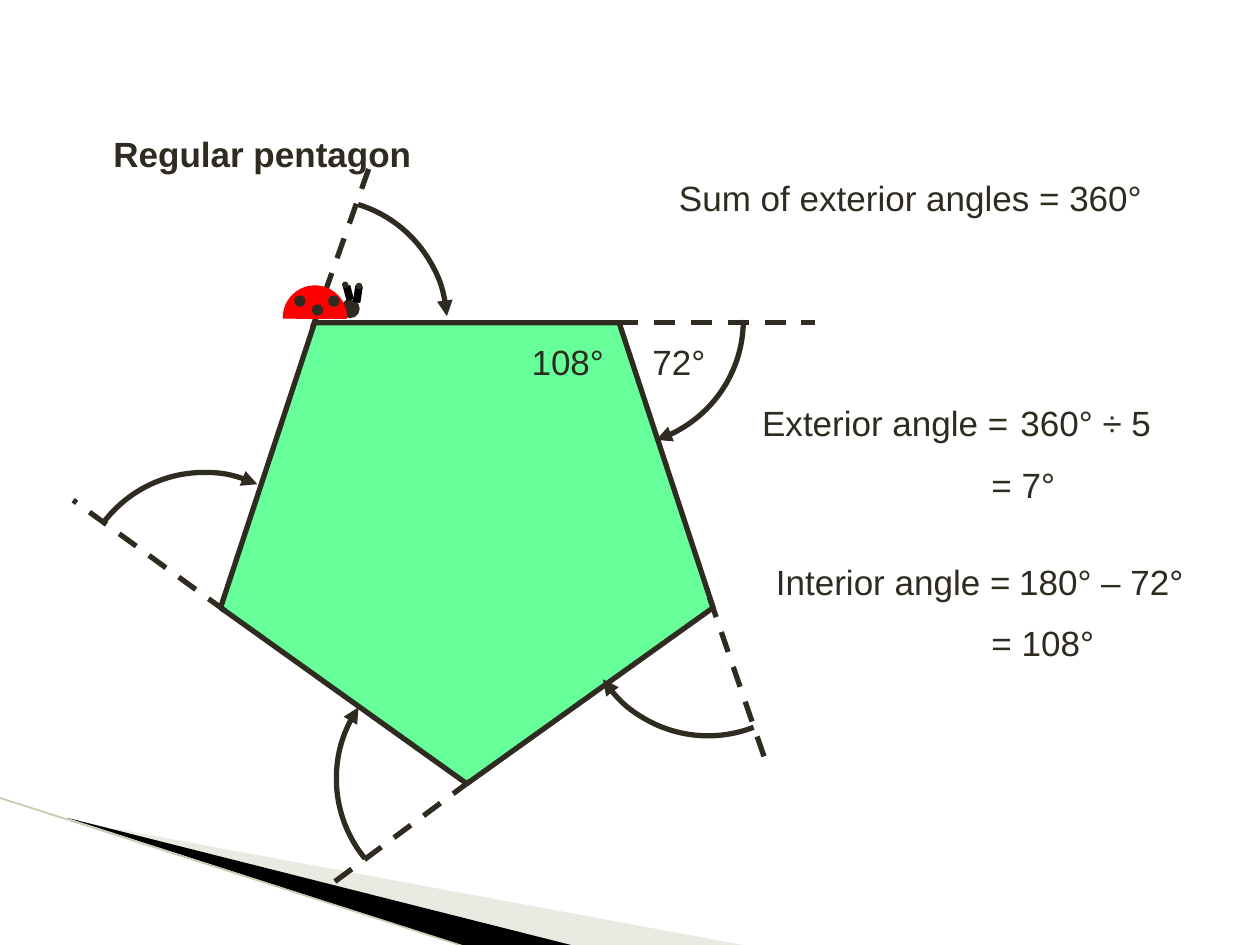
from lxml.etree import SubElement
from pptx import Presentation
from pptx.dml.color import RGBColor
from pptx.enum.dml import MSO_LINE
from pptx.enum.shapes import MSO_CONNECTOR, MSO_SHAPE
from pptx.enum.text import MSO_ANCHOR, PP_ALIGN
from pptx.oxml.ns import qn
from pptx.util import Inches, Pt

INK, GREEN, RED, BLACK = "2F2B20", "66FF99", "FF0000", "000000"

TITLE = ("Regular pentagon", 0.8, 1, 2.58)
LABELS = [  # text, left, top, width
    ("72°", 5.08, 2.65, 0.63),
    ("108°", 4.12, 2.65, 0.78),
    ("Sum of exterior angles = 360°", 5.29, 1.35, 3.95),
    ("Exterior angle =", 5.95, 3.14, 2.19),
    ("360° ÷ 5", 8, 3.14, 1.32),
    ("= 7°", 7.77, 3.63, 0.71),
    ("Interior angle =", 6.06, 4.4, 2.08),
    ("180° – 72°", 7.99, 4.4, 1.57),
    ("= 108°", 7.77, 4.88, 1.02),
]
WINGS = [  # points, colour, opacity in percent
    ([(0.55, 6.51), (5.95, 7.51), (4.56, 7.51)], "CECCB7", 40),
    ([(0.53, 6.49), (4.57, 7.51), (3.72, 7.52)], BLACK, 100),
]
RAYS = [  # sides extended past each corner
    ((4.9, 2.56), (6.47, 2.56)),
    ((5.63, 4.74), (6.1, 6.11)),
    ((3.73, 6.2), (2.64, 7.01)),
    ((1.79, 4.85), (0.58, 3.97)),
    ((2.48, 2.6), (2.93, 1.33)),
]
TURNS = [  # centre, start and end in degrees clockwise from east
    ((4.9, 2.54), 0, 72),
    ((2.55, 2.58), 287, 356),
    ((1.62, 4.75), 216.4, 295),
    ((3.67, 6.18), 140.6, 214.5),
    ((5.62, 4.84), 68.8, 146.5),
]
RADIUS = 1
HEAD = (2.71, 2.38, 0.14)  # left, top, size
SPOTS = [(2.34, 2.35, 0.08), (2.48, 2.42, 0.08), (2.61, 2.35, 0.08)]
TIPS = [(2.72, 2.24, 0.04), (2.83, 2.25, 0.04)]
FEELERS = [((2.78, 2.38), (2.75, 2.27)), ((2.83, 2.4), (2.85, 2.27))]


def rgb(code):
    return RGBColor.from_string(code)


def paint(shape, fill=None, line=None, width=0.75):
    shape.shadow.inherit = False
    if fill:
        shape.fill.solid()
        shape.fill.fore_color.rgb = rgb(fill)
    else:
        shape.fill.background()
    if line:
        shape.line.color.rgb = rgb(line)
        shape.line.width = Pt(width)
    else:
        shape.line.fill.background()


def add_form(shapes, kind, x, y, w, h, **look):
    form = shapes.add_shape(kind, Inches(x), Inches(y), Inches(w), Inches(h))
    paint(form, **look)
    return form


def add_line(shapes, start, end, color, width, dash=None):
    ends = [Inches(v) for v in (*start, *end)]
    line = shapes.add_connector(MSO_CONNECTOR.STRAIGHT, *ends)
    line.line.color.rgb = rgb(color)
    line.line.width = Pt(width)
    line.line.dash_style = dash
    SubElement(line._element.spPr, qn("a:effectLst"))


def add_wing(shapes, points, color, alpha):
    first, *rest = [(Inches(x), Inches(y)) for x, y in points]
    pen = shapes.build_freeform(*first)
    pen.add_line_segments(rest, close=True)
    wing = pen.convert_to_shape()
    paint(wing, color)
    if alpha < 100:
        tone = wing._element.spPr.find(".//" + qn("a:srgbClr"))
        SubElement(tone, qn("a:alpha"), val=str(alpha * 1000))


def add_turn(shapes, centre, start, end):
    """Draw a clockwise arc with an arrowhead at its end."""
    x, y = centre
    arc = add_form(shapes, MSO_SHAPE.ARC, x - RADIUS, y - RADIUS,
                   2 * RADIUS, 2 * RADIUS, line=INK, width=3)
    for i, angle in enumerate((start, end)):
        arc.adjustments[i] = angle * 0.6
    SubElement(arc.line._get_or_add_ln(), qn("a:tailEnd"), type="triangle")


def write(box, text, x, y, w, bold=False):
    box.left, box.top, box.width, box.height = map(Inches, (x, y, w, 0.44))
    frame = box.text_frame
    frame.text = text
    frame.word_wrap = False
    frame.vertical_anchor = MSO_ANCHOR.TOP
    par = frame.paragraphs[0]
    par.alignment = PP_ALIGN.LEFT
    look = {"name": "Arial", "size": Pt(20), "bold": bold}
    for key, value in look.items():
        setattr(par.font, key, value)
    par.font.color.rgb = rgb(INK)


def add_bug(shapes):
    bug = shapes.add_group_shape().shapes

    def add_dot(x, y, size):
        add_form(bug, MSO_SHAPE.OVAL, x, y, size, size, fill=INK, line=INK)

    add_dot(*HEAD)
    shell = add_form(bug, MSO_SHAPE.CHORD, 2.25, 2.27, 0.5, 0.5,
                     fill=RED, line=RED)
    shell.adjustments[0], shell.adjustments[1] = 107.33, 0.82
    for spot in SPOTS:
        add_dot(*spot)
    for feeler in FEELERS:
        add_line(bug, *feeler, BLACK, 4.33)
    for tip in TIPS:
        add_dot(*tip)


def main():
    deck = Presentation()
    deck.slide_width, deck.slide_height = Inches(10), Inches(7.5)
    slide = deck.slides.add_slide(deck.slide_layouts[5])
    shapes = slide.shapes
    write(shapes.title, *TITLE, bold=True)
    for wing in WINGS:
        add_wing(shapes, *wing)
    add_line(shapes, (-0.01, 6.33), (3.71, 7.52), "C9C7B0", 0.95)
    body = add_form(shapes, MSO_SHAPE.REGULAR_PENTAGON, 1.75, 2.56, 3.91, 3.66,
                    fill=GREEN, line=INK, width=3)
    body.rotation = 180
    for ray in RAYS:
        add_line(shapes, *ray, INK, 3, MSO_LINE.DASH)
    for turn in TURNS:
        add_turn(shapes, *turn)
    for label in LABELS:
        write(shapes.add_textbox(0, 0, 0, 0), *label)
    add_bug(shapes)
    deck.save("out.pptx")


if __name__ == "__main__":
    main()
